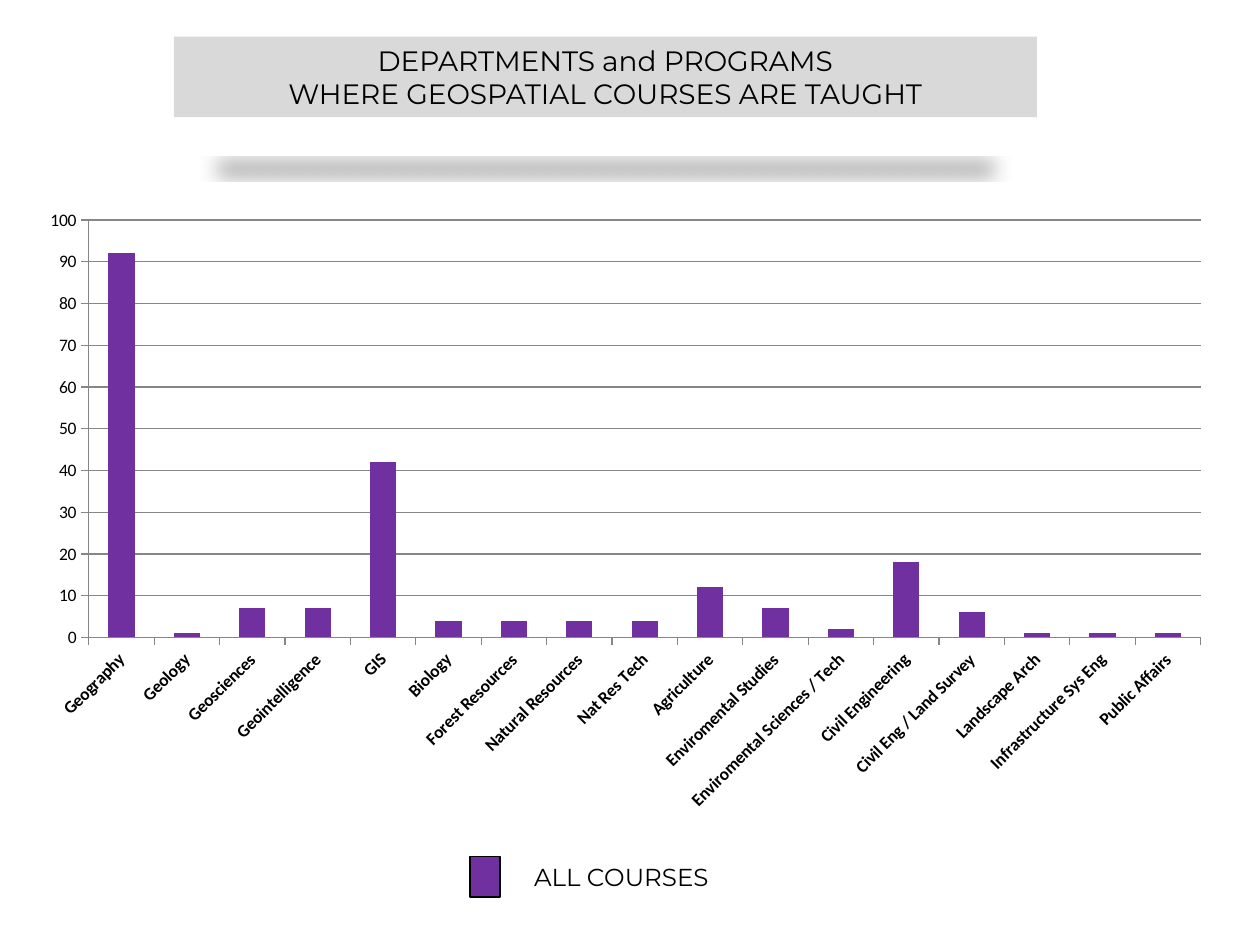
from lxml import etree
from pptx import Presentation
from pptx.chart.data import CategoryChartData
from pptx.dml.color import RGBColor
from pptx.enum import chart as charts, shapes, text
from pptx.oxml import parse_xml
from pptx.oxml.ns import nsdecls, qn
from pptx.util import Inches, Pt

BLACK = RGBColor(0x00, 0x00, 0x00)
GREY = RGBColor(0xD9, 0xD9, 0xD9)
RULE = RGBColor(0x86, 0x86, 0x86)
PURPLE = RGBColor(0x70, 0x30, 0xA0)
FONT = "Montserrat"

TITLE = "DEPARTMENTS and PROGRAMS\nWHERE GEOSPATIAL COURSES ARE TAUGHT"
COURSES = {
    "Geography": 92,
    "Geology": 1,
    "Geosciences": 7,
    "Geointelligence": 7,
    "GIS": 42,
    "Biology": 4,
    "Forest Resources": 4,
    "Natural Resources": 4,
    "Nat Res Tech": 4,
    "Agriculture": 12,
    "Enviromental Studies": 7,
    "Enviromental Sciences / Tech": 2,
    "Civil Engineering": 18,
    "Civil Eng / Land Survey": 6,
    "Landscape Arch": 1,
    "Infrastructure Sys Eng": 1,
    "Public Affairs": 1,
}
SHADOW = (
    f'<a:effectLst {nsdecls("a")}><a:outerShdw blurRad="152400" dist="317500" '
    'dir="5400000" sx="90000" sy="-19000" rotWithShape="0">'
    '<a:srgbClr val="000000"><a:alpha val="37000"/></a:srgbClr>'
    '</a:outerShdw></a:effectLst>'
)


def format_text(frame, size, align):
    """Give every paragraph of a frame the slide's font and an alignment."""
    for para in frame.paragraphs:
        para.alignment = align
        for span in para.runs:
            span.font.name = FONT
            span.font.size = Pt(size)
            span.font.color.rgb = BLACK


def add_title(page, left, top, width, height):
    """Place the grey title panel with its reflected shadow."""
    panel = page.shapes.add_shape(
        shapes.MSO_SHAPE.RECTANGLE, left, top, width, height)
    panel.fill.solid()
    panel.fill.fore_color.rgb = GREY
    panel.line.fill.background()
    panel.shadow.inherit = False
    properties = panel._element.spPr
    properties.replace(properties.find(qn("a:effectLst")), parse_xml(SHADOW))
    frame = panel.text_frame
    frame.word_wrap = True
    frame.vertical_anchor = text.MSO_ANCHOR.MIDDLE
    frame.text = TITLE
    format_text(frame, 16, text.PP_ALIGN.CENTER)


def add_course_chart(page, left, top, width, height):
    """Place the column chart of courses by department."""
    data = CategoryChartData()
    data.categories = list(COURSES)
    data.add_series("Series 1", list(COURSES.values()))
    chart = page.shapes.add_chart(
        charts.XL_CHART_TYPE.COLUMN_CLUSTERED, left, top, width, height, data).chart
    chart.has_legend = False
    chart.has_title = False
    chart.font.name = "Calibri"
    chart.font.size = Pt(10)
    chart.font.color.rgb = BLACK

    plot = chart.plots[0]
    plot.gap_width = 150
    plot.vary_by_categories = False
    bars = plot.series[0].format.fill
    bars.solid()
    bars.fore_color.rgb = PURPLE

    departments, counts = chart.category_axis, chart.value_axis
    counts.minimum_scale, counts.maximum_scale = 0, 100
    counts.major_unit = 10
    counts.has_major_gridlines = True
    for line in (departments.format.line, counts.format.line,
                 counts.major_gridlines.format.line):
        line.color.rgb = RULE
        line.width = Pt(0.75)
    for axis in (departments, counts):
        axis.major_tick_mark = charts.XL_TICK_MARK.OUTSIDE
        axis.tick_labels.font.size = Pt(10)
    departments.tick_labels.font.bold = True
    body = departments._element.find(qn("c:txPr")).find(qn("a:bodyPr"))
    body.set("rot", "-2700000")
    body.set("vert", "horz")


def add_key(page, left, top, width, height):
    """Place the grouped colour swatch and its label."""
    group = page.shapes.add_group_shape()
    swatch = group.shapes.add_shape(
        shapes.MSO_SHAPE.RECTANGLE, left, top + Inches(0.01), Inches(0.24), Inches(0.32))
    swatch.shadow.inherit = False
    swatch.fill.solid()
    swatch.fill.fore_color.rgb = PURPLE
    swatch.line.color.rgb = BLACK
    swatch.line.width = Pt(0.75)
    indent = Inches(0.41)
    label = group.shapes.add_textbox(left + indent, top, width - indent, height)
    label.text_frame.word_wrap = False
    label.text_frame.text = "ALL COURSES"
    format_text(label.text_frame, 14, text.PP_ALIGN.LEFT)


def main():
    """Build the slide and save it."""
    deck = Presentation()
    deck.slide_width, deck.slide_height = Inches(10), Inches(7.5)
    page = deck.slides.add_slide(deck.slide_layouts[6])
    add_course_chart(page, Inches(0.21), Inches(1.57), Inches(9.51), Inches(4.96))
    add_key(page, Inches(3.73), Inches(6.79), Inches(2.15), Inches(0.34))
    add_title(page, Inches(1.38), Inches(0.29), Inches(6.85), Inches(0.64))
    deck.save("out.pptx")


if __name__ == "__main__":
    main()
